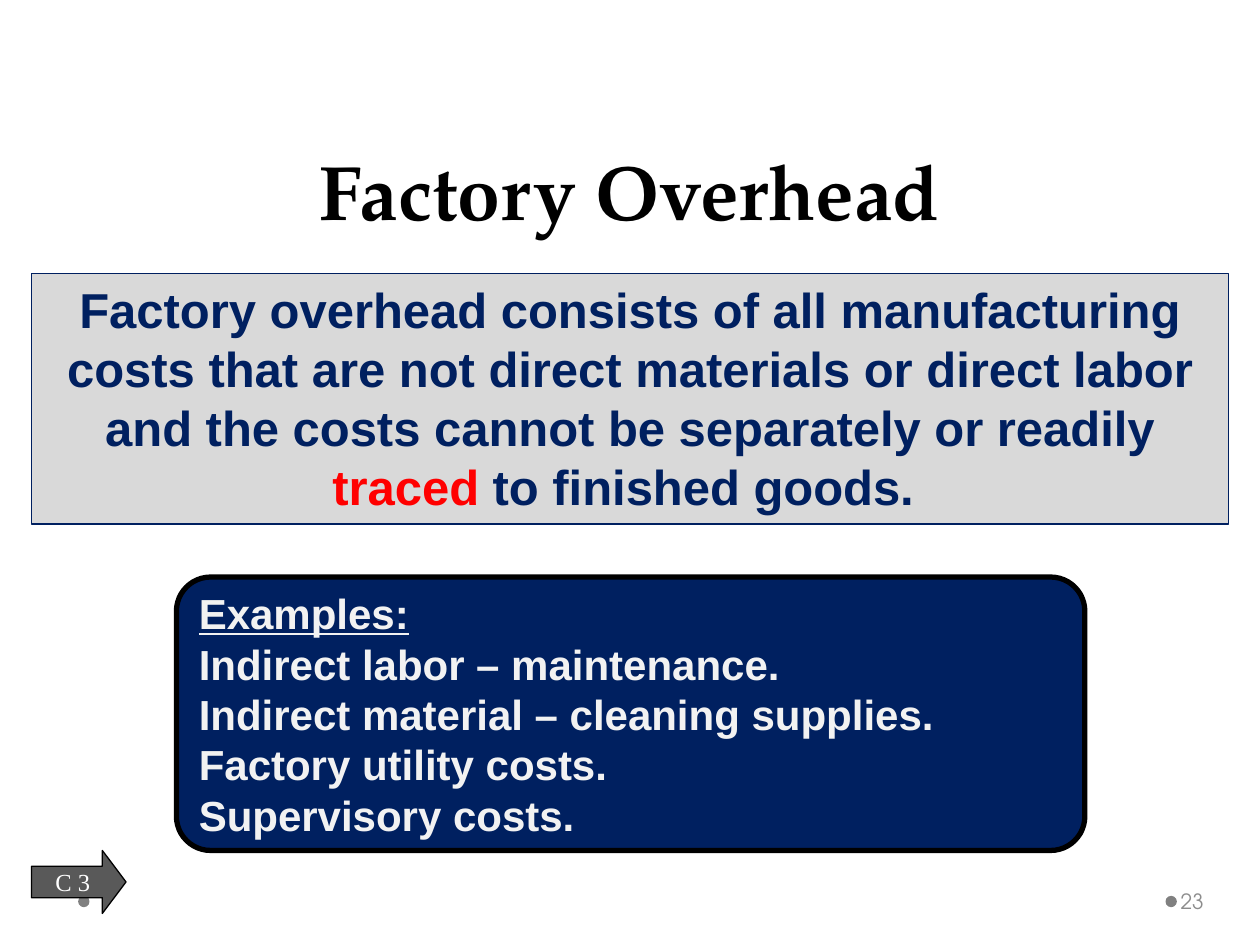
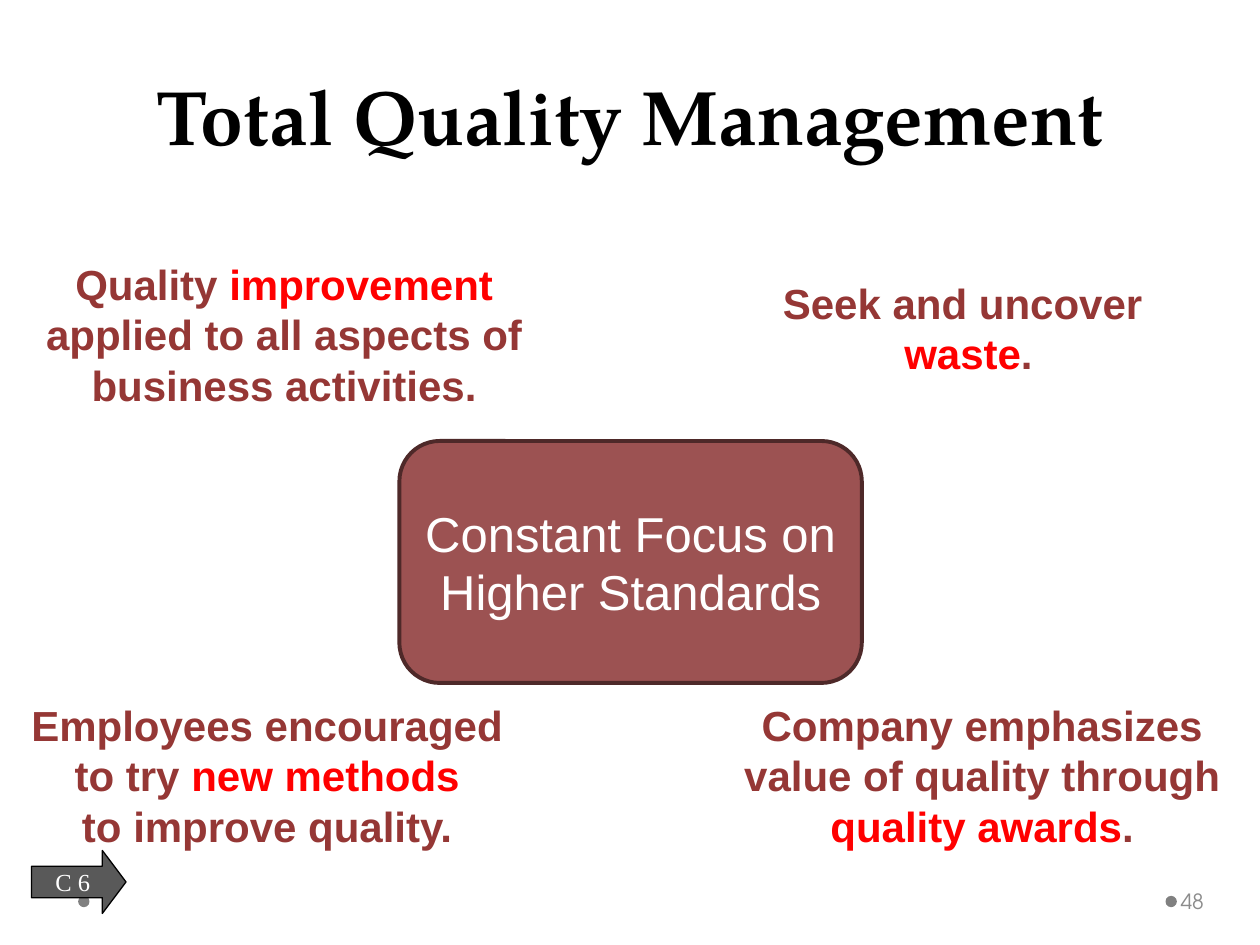
from pptx import Presentation
from pptx.dml.color import RGBColor
from pptx.enum.shapes import MSO_SHAPE
from pptx.enum.text import MSO_ANCHOR, MSO_AUTO_SIZE, PP_ALIGN
from pptx.util import Inches, Pt

CELL = 0.25  # inches; the page is a grid of 40 columns by 30 rows
COLUMNS, ROWS = 40, 30
TITLE_ONLY = 5

COLORS = {
    "black": "000000",
    "white": "FFFFFF",
    "pale": "F2F2F2",
    "panel": "D9D9D9",
    "dot": "808080",
    "number": "8C8C8C",
    "arrow": "595959",
    "navy": "002060",
    "red": "FF0000",
    "brick": "953735",
    "rose": "9C5252",
    "maroon": "4E2929",
}
TITLE_FONT = "TeX Gyre Pagella"
BODY_FONT = "Arial"
TAG_FONT = "Times New Roman"
NUMBER_FONT = "TeX Gyre Adventor"


def color(name):
    return RGBColor.from_string(COLORS[name])


def grid(*cells):
    return [Inches(round(cell * CELL, 2)) for cell in cells]


class Deck:
    def __init__(self):
        self.deck = Presentation()
        self.deck.slide_width, self.deck.slide_height = grid(COLUMNS, ROWS)
        self.page = None

    def add_page(self, title, title_place, number, tag):
        self.page = self.deck.slides.add_slide(self.deck.slide_layouts[TITLE_ONLY])
        for column in (2.48, 37):
            self.shape(MSO_SHAPE.OVAL, (column, 28.44, 0.36, 0.36), "dot")
        self.title(title, title_place)
        box = self.text_box((37.36, 27.8, 2.44, 1.6), [number], "number",
                            size=12, font=NUMBER_FONT, bold=False,
                            align=PP_ALIGN.LEFT, anchor=MSO_ANCHOR.MIDDLE)
        box.text_frame.margin_left = Inches(0.03)
        box.text_frame.margin_right = Inches(0.05)
        arrow = self.shape(MSO_SHAPE.RIGHT_ARROW, (1, 27, 3, 2), "arrow",
                           "black", adjustments=(0.5, 0.375))
        self.fill_text(arrow, [tag], "white", size=14, font=TAG_FONT,
                       bold=False, wrap=False)

    def title(self, text, place):
        box = self.page.shapes.title
        box.left, box.top, box.width, box.height = grid(*place)
        self.fill_text(box, [text], "black", size=44, font=TITLE_FONT,
                       anchor=MSO_ANCHOR.BOTTOM)
        box.text_frame.paragraphs[0].line_spacing = Pt(58)

    def shape(self, kind, place, fill, line=None, line_width=0.75, adjustments=()):
        shape = self.page.shapes.add_shape(kind, *grid(*place))
        shape.shadow.inherit = False
        shape.fill.solid()
        shape.fill.fore_color.rgb = color(fill)
        if line:
            shape.line.color.rgb = color(line)
            shape.line.width = Pt(line_width)
        else:
            shape.line.fill.background()
        for index, value in enumerate(adjustments):
            shape.adjustments[index] = value
        return shape

    def text_box(self, place, paragraphs, ink, **style):
        box = self.page.shapes.add_textbox(*grid(*place))
        self.fill_text(box, paragraphs, ink, **style)
        return box

    def fill_text(self, box, paragraphs, ink, size=24, font=BODY_FONT, bold=True,
                  align=PP_ALIGN.CENTER, anchor=MSO_ANCHOR.MIDDLE, wrap=True):
        """Fill a box; *asterisks* mark red words and newlines break lines."""
        frame = box.text_frame
        frame.word_wrap = wrap
        frame.auto_size = MSO_AUTO_SIZE.NONE
        frame.vertical_anchor = anchor
        for index, text in enumerate(paragraphs):
            para = frame.add_paragraph() if index else frame.paragraphs[0]
            para.alignment = align
            para.font.name = font
            para.font.size = Pt(size)
            para.font.bold = bold
            para.font.color.rgb = color(ink)
            self.add_spans(para, text)

    def add_spans(self, para, text):
        for position, part in enumerate(text.split("*")):
            for line, words in enumerate(part.split("\n")):
                if line:
                    para.add_line_break()
                if words:
                    span = para.add_run()
                    span.text = words
                    if position % 2:
                        span.font.color.rgb = color("red")

    def save(self):
        self.deck.save("out.pptx")


def add_factory_overhead(deck):
    deck.add_page("Factory Overhead", (2, 3, 36, 4.68), "23", "C 3")
    definition = deck.shape(MSO_SHAPE.RECTANGLE, (1, 8.68, 38, 7.96), "panel", "navy")
    deck.fill_text(definition, [
        "Factory overhead consists of all manufacturing costs that are not "
        "direct materials or direct labor and the costs cannot be separately "
        "or readily *traced* to finished goods. "
    ], "navy", size=28, anchor=MSO_ANCHOR.TOP)
    examples = deck.shape(MSO_SHAPE.ROUNDED_RECTANGLE, (5.6, 18.32, 28.84, 8.68),
                          "navy", "black", 3, adjustments=(0.125,))
    deck.fill_text(examples, [
        "Examples:",
        "Indirect labor – maintenance.",
        "Indirect material – cleaning supplies.\n"
        "Factory utility costs.\nSupervisory costs.",
    ], "pale", align=PP_ALIGN.LEFT, wrap=False)
    examples.text_frame.paragraphs[0].font.underline = True


def add_quality_management(deck):
    deck.add_page("Total Quality Management", (2, 3.32, 36, 2), "48", "C 6")
    principles = [
        ((1, 8, 16.04, 5.24), False,
         ["Quality *improvement*", "applied to all aspects of", "business activities."]),
        ((24.4, 8.6, 12.32, 3.64), False,
         ["Seek and uncover", "* waste*."]),
        ((0.52, 22, 15.92, 5.24), True,
         ["Employees encouraged\nto try *new methods\n*to improve quality."]),
        ((23.16, 22, 16.04, 5.24), True,
         ["Company emphasizes\nvalue of quality through\n*quality awards*."]),
    ]
    for place, wrap, paragraphs in principles:
        deck.text_box(place, paragraphs, "brick", anchor=MSO_ANCHOR.TOP, wrap=wrap)
    focus = deck.shape(MSO_SHAPE.ROUNDED_RECTANGLE, (12.68, 14, 14.68, 7.68),
                       "rose", "maroon", 2.25)
    deck.fill_text(focus, ["Constant Focus on Higher Standards"], "white",
                   size=28, bold=False)


def main():
    deck = Deck()
    add_factory_overhead(deck)
    add_quality_management(deck)
    deck.save()


if __name__ == "__main__":
    main()
